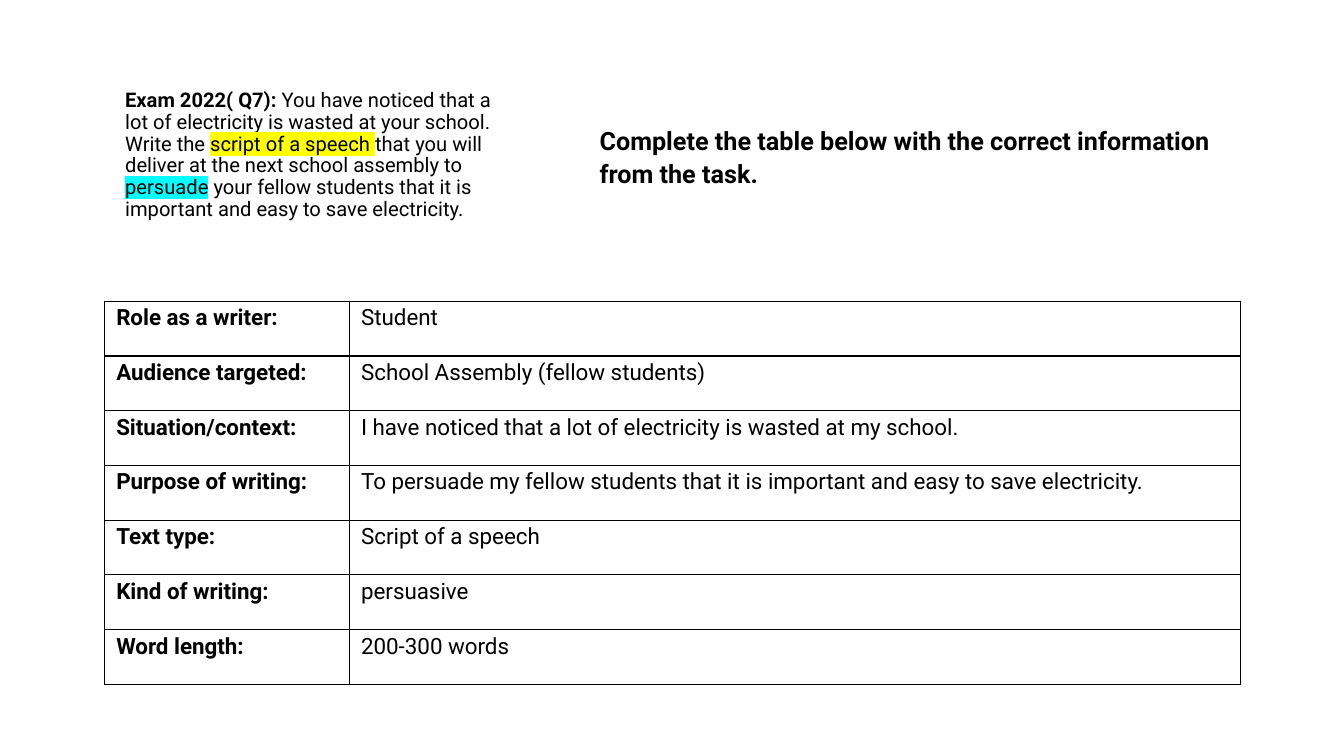
import dataclasses

import lxml.etree
import pptx
import pptx.dml.color
import pptx.enum.text
import pptx.oxml.ns
import pptx.util

Cm = pptx.util.Cm
Pt = pptx.util.Pt
RGBColor = pptx.dml.color.RGBColor
qn = pptx.oxml.ns.qn

FONT = "Roboto"
BLACK = RGBColor(0, 0, 0)
YELLOW = RGBColor(255, 255, 0)
CYAN = RGBColor(0, 255, 255)


@dataclasses.dataclass
class Part:
    text: str
    bold: bool = False
    mark: RGBColor | None = None


@dataclasses.dataclass
class Row:
    label: str
    answer: str


TASK = [
    Part("Exam 2022( Q7): ", bold=True),
    Part("You have noticed that a lot of electricity is wasted at your school. Write the "),
    Part("script of a speech ", mark=YELLOW),
    Part("that you will deliver at the next school assembly to "),
    Part("persuade", mark=CYAN),
    Part(" your fellow students that it is important and easy to save electricity."),
]

ROWS = [
    Row("Role as a writer:", "Student"),
    Row("Audience targeted:", "School Assembly (fellow students)"),
    Row("Situation/context:", "I have noticed that a lot of electricity is wasted at my school."),
    Row("Purpose of writing:",
        "To persuade my fellow students that it is important and easy to save electricity."),
    Row("Text type:", "Script of a speech"),
    Row("Kind of writing:", "persuasive"),
    Row("Word length:", "200-300 words"),
]

TOP, HIGH = Cm(1.63), Cm(4.57)
COLS = (Cm(6.17), Cm(22.46))
ROW_HIGH = Cm(1.38)


def style(para, size: float, space: float, bold: bool | None = None) -> None:
    font = para.font
    font.name, font.size, font.bold = FONT, Pt(size), bold
    font.color.rgb = BLACK
    para.line_spacing = space
    para.alignment = pptx.enum.text.PP_ALIGN.LEFT


def set_frame(frame) -> None:
    frame.word_wrap = True
    frame.auto_size = pptx.enum.text.MSO_AUTO_SIZE.NONE
    frame.vertical_anchor = pptx.enum.text.MSO_ANCHOR.MIDDLE


def add_part(para, part: Part) -> None:
    run = para.add_run()
    run.text = part.text
    run.font.bold = part.bold
    if part.mark is not None:
        light = lxml.etree.SubElement(run.font._element, qn("a:highlight"))
        lxml.etree.SubElement(light, qn("a:srgbClr"), val=str(part.mark))


def add_lines(cell) -> None:
    props = cell._tc.get_or_add_tcPr()
    for side in ("lnL", "lnR", "lnT", "lnB"):
        line = lxml.etree.SubElement(props, qn(f"a:{side}"), w=str(Pt(1)))
        fill = lxml.etree.SubElement(line, qn("a:solidFill"))
        lxml.etree.SubElement(fill, qn("a:srgbClr"), val=str(BLACK))


def fill_cell(cell, text: str, bold: bool) -> None:
    cell.margin_left = cell.margin_right = Cm(0.29)
    cell.margin_top = cell.margin_bottom = 0
    para = cell.text_frame.paragraphs[0]
    para.text = text
    style(para, 16, 1.15, bold)
    para.space_before, para.space_after = Pt(12), Pt(6)
    add_lines(cell)
    cell.fill.background()


def add_task(slide) -> None:
    title = slide.shapes.title
    title.left, title.top, title.width, title.height = Cm(2.9), TOP, Cm(9.83), HIGH
    set_frame(title.text_frame)
    para = title.text_frame.paragraphs[0]
    style(para, 14.4, 0.9)
    for part in TASK:
        add_part(para, part)


def add_prompt(slide) -> None:
    box = slide.shapes.add_textbox(Cm(14.86), TOP, Cm(16.66), HIGH)
    set_frame(box.text_frame)
    para = box.text_frame.paragraphs[0]
    para.text = "Complete the table below with the correct information from the task."
    style(para, 18, 1.1, True)
    para.space_after = Pt(6)


def add_grid(slide) -> None:
    frame = slide.shapes.add_table(
        len(ROWS), len(COLS), Cm(2.64), Cm(7.59), sum(COLS), ROW_HIGH * len(ROWS))
    table = frame.table
    table.first_row = table.horz_banding = False
    for col, width in zip(table.columns, COLS):
        col.width = width
    for line, row in zip(table.rows, ROWS):
        line.height = ROW_HIGH
        fill_cell(line.cells[0], row.label, True)
        fill_cell(line.cells[1], row.answer, False)


def main() -> None:
    deck = pptx.Presentation()
    deck.slide_width, deck.slide_height = Cm(33.87), Cm(19.05)
    slide = deck.slides.add_slide(deck.slide_layouts.get_by_name("Title Only"))

    # Exam task, prompt and answer table
    add_task(slide)
    add_grid(slide)
    add_prompt(slide)
    deck.save("out.pptx")


if __name__ == "__main__":
    main()
